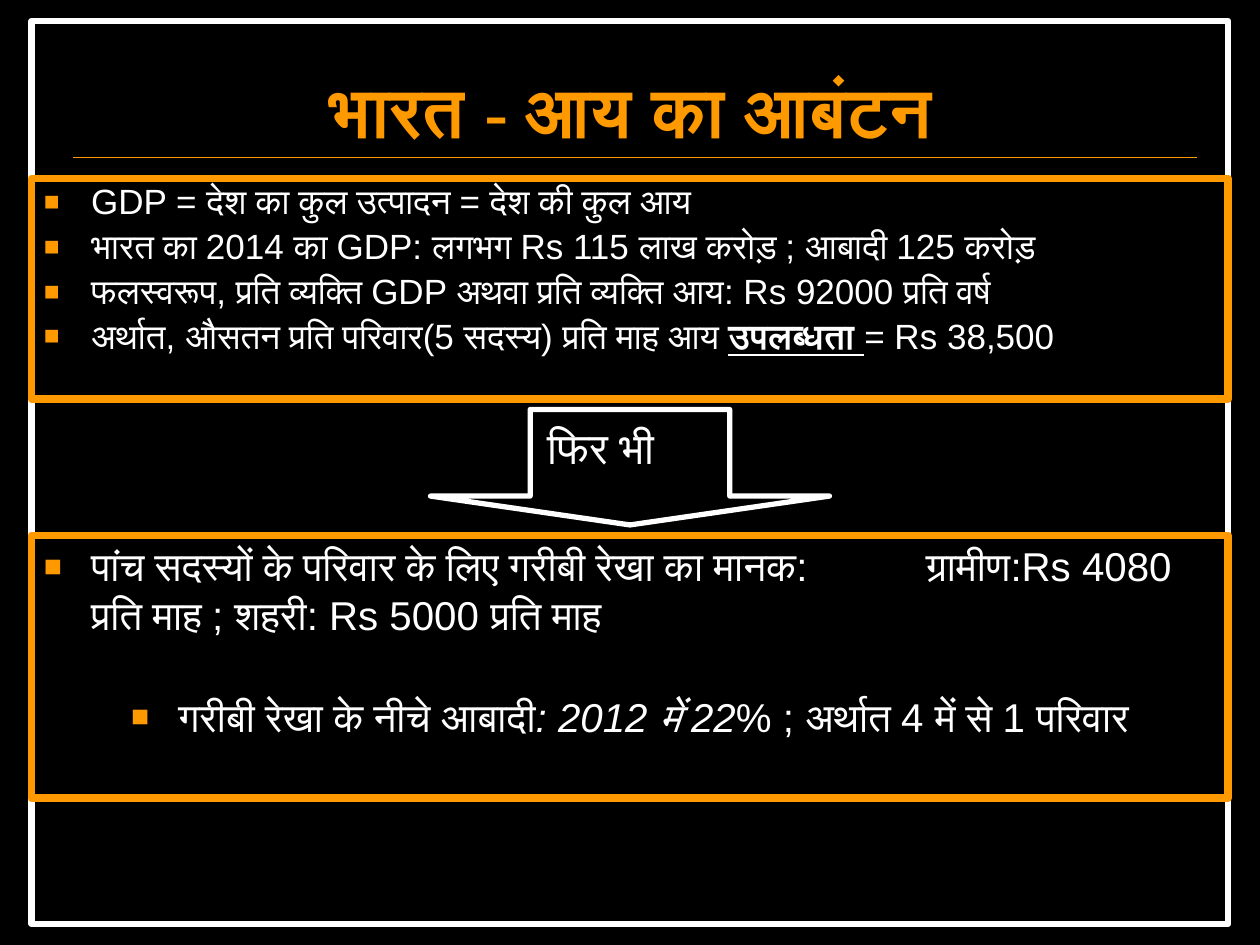
from lxml.etree import SubElement
from pptx import Presentation
from pptx.dml.color import RGBColor
from pptx.enum.shapes import MSO_CONNECTOR, MSO_SHAPE
from pptx.enum.text import MSO_ANCHOR, MSO_AUTO_SIZE, PP_ALIGN
from pptx.oxml.ns import qn
from pptx.util import Pt

COLORS = {
    "black": RGBColor.from_string("000000"),
    "white": RGBColor.from_string("FFFFFF"),
    "orange": RGBColor.from_string("FF9900"),
}
LEFT, WIDTH, INDENT = 18, 684, 27


def add_outline(kind, left, top, width, height, color, weight):
    sp = s.shapes.add_shape(kind, Pt(left), Pt(top), Pt(width), Pt(height))
    sp.shadow.inherit = False
    sp.fill.background()
    sp.line.color.rgb = COLORS[color]
    sp.line.width = Pt(weight)
    return sp


def add_paragraph(tf, runs, size, spacing, before, align=PP_ALIGN.LEFT, bullet=True):
    """Fill the first empty paragraph or add one; runs are (text, style) pairs."""
    p = tf.paragraphs[-1] if not tf.text else tf.add_paragraph()
    p.alignment, p.line_spacing, p.space_before = align, spacing, Pt(before)
    for text, style in runs:
        r = p.add_run()
        r.text = text
        r.font.name, r.font.size = "Arial", Pt(size)
        r.font.color.rgb = COLORS["white"]
        if style:
            setattr(r.font, "italic" if style == "italic" else "bold", True)
            r.font.underline = style == "underline"
    if bullet:
        pPr = p._p.get_or_add_pPr()
        pPr.set("marL", str(Pt(INDENT)))
        pPr.set("indent", str(-Pt(INDENT)))
        clr = SubElement(pPr, qn("a:buClr"))
        SubElement(clr, qn("a:srgbClr"), val=str(COLORS["orange"]))
        SubElement(pPr, qn("a:buSzPct"), val="75000")
        SubElement(pPr, qn("a:buFont"), typeface="Arial")
        SubElement(pPr, qn("a:buChar"), char="■")


prs = Presentation()
prs.slide_width, prs.slide_height = Pt(720), Pt(540)
s = prs.slides.add_slide(prs.slide_layouts[5])
s.background.fill.solid()
s.background.fill.fore_color.rgb = COLORS["black"]

# Frame and rule under the title
add_outline(MSO_SHAPE.RECTANGLE, LEFT, 12, WIDTH, 516, "white", 3.5)
rule = s.shapes.add_connector(MSO_CONNECTOR.STRAIGHT, Pt(42), Pt(90), Pt(684), Pt(90))
rule.line.color.rgb = COLORS["orange"]
rule.line.width = Pt(1)
SubElement(rule._element.spPr, qn("a:effectLst"))

# Title
title = s.shapes.title
title.left, title.top, title.width, title.height = Pt(36), Pt(0), Pt(648), Pt(90)
tf = title.text_frame
tf.text = "भारत - आय का आबंटन"
tf.auto_size = MSO_AUTO_SIZE.NONE
tf.vertical_anchor = MSO_ANCHOR.BOTTOM
p = tf.paragraphs[0]
p.alignment, p.line_spacing = PP_ALIGN.CENTER, 0.8
font = p.runs[0].font
font.name, font.size, font.bold = "Times New Roman", Pt(40), True
font.color.rgb = COLORS["orange"]

# Income box
income = add_outline(MSO_SHAPE.RECTANGLE, LEFT, 102, WIDTH, 126, "orange", 4.5)
tf = income.text_frame
tf.vertical_anchor = MSO_ANCHOR.TOP
for runs in (
    [("GDP = देश का कुल उत्पादन = देश की कुल आय", None)],
    [("भारत का 2014 का GDP: लगभग Rs 115 लाख करोड़ ; आबादी 125 करोड़", None)],
    [("फलस्वरूप, प्रति व्यक्ति GDP अथवा प्रति व्यक्ति आय: Rs 92000 प्रति वर्ष", None)],
    [("अर्थात, औसतन प्रति परिवार(5 सदस्य) प्रति माह आय ", None),
     ("उपलब्धता ", "underline"), ("= Rs 38,500", None)],
):
    add_paragraph(tf, runs, 20, 0.9, 4)

# Arrow with its label
arrow = add_outline(MSO_SHAPE.DOWN_ARROW, 246, 234, 228, 66, "white", 3)
arrow.adjustments[0], arrow.adjustments[1] = 0.5, 0.25
label = s.shapes.add_textbox(Pt(306), Pt(240), Pt(104), Pt(35))
label.text_frame.word_wrap = True
add_paragraph(label.text_frame, [("फिर भी", None)], 25, 0.9, 5, bullet=False)

# Poverty box
poverty = add_outline(MSO_SHAPE.RECTANGLE, LEFT, 306, WIDTH, 150, "orange", 4.5)
tf = poverty.text_frame
tf.vertical_anchor = MSO_ANCHOR.TOP
add_paragraph(tf, [("पांच सदस्यों के परिवार के लिए गरीबी रेखा का मानक:\t\tग्रामीण:Rs "
                    "4080 प्रति माह ; शहरी: Rs 5000 प्रति माह", None)], 23, 1.0, 4.6)
add_paragraph(tf, [("गरीबी रेखा के नीचे आबादी", None), (": 2012 में 22", "italic"),
                   ("% ; अर्थात 4 में से 1 परिवार", None)],
              23, 0.8, 36, PP_ALIGN.CENTER)

prs.save("out.pptx")
